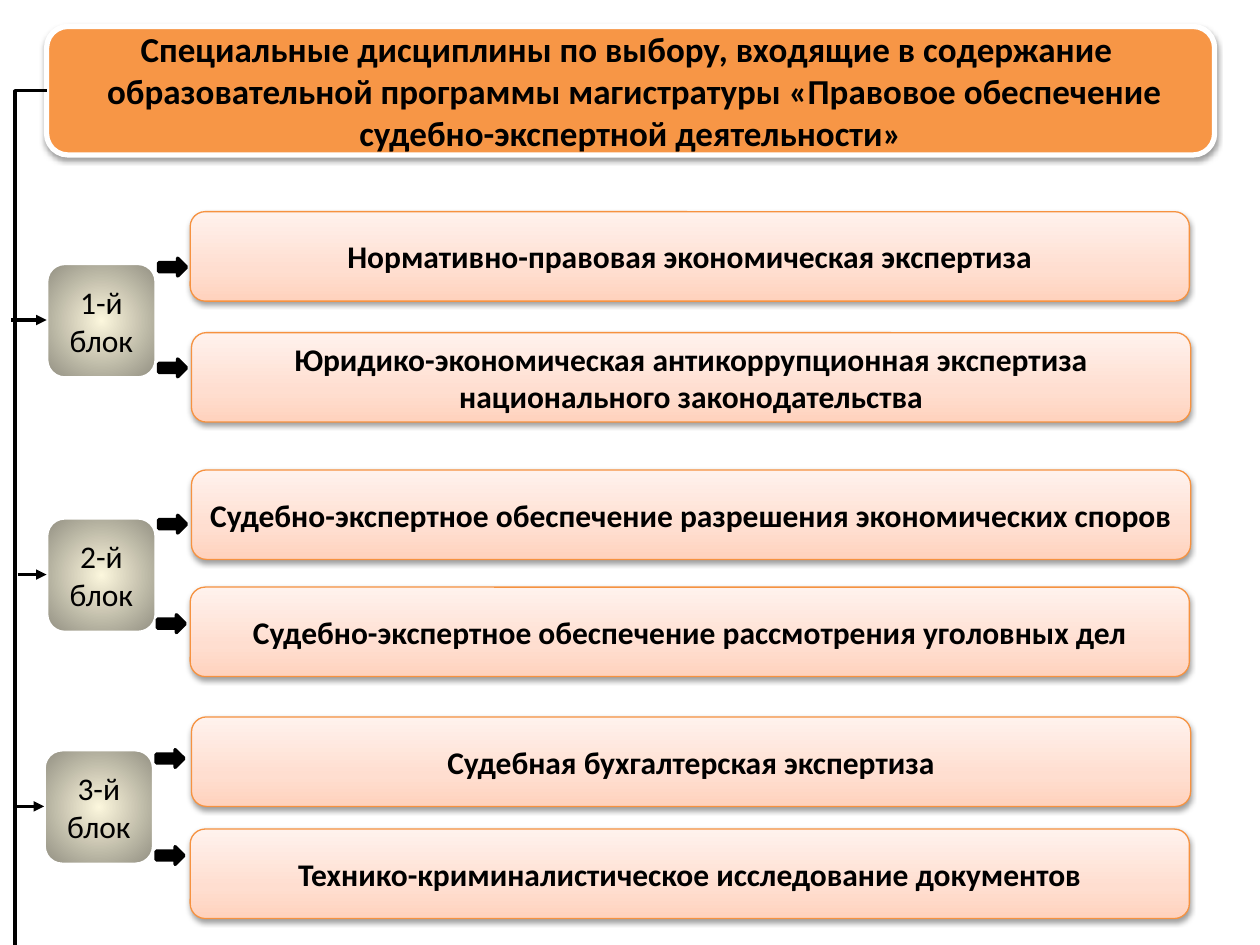
from dataclasses import dataclass

from pptx import Presentation
from pptx.dml.color import RGBColor
from pptx.enum.shapes import MSO_CONNECTOR as Link, MSO_SHAPE as Preset
from pptx.enum.text import MSO_ANCHOR as Anchor, PP_ALIGN as Align
from pptx.oxml import parse_xml
from pptx.oxml.ns import nsdecls, qn
from pptx.util import Inches, Pt


@dataclass(frozen=True)
class Theme:
    font: str = "Calibri"
    title_size: int = 20
    body_size: int = 18
    ink: str = "000000"
    white: str = "FFFFFF"
    title_fill: str = "F79646"
    course_line: str = "F69240"
    course_stops: tuple = ((0, "FFD2BD"), (35, "FFDED0"), (100, "FFF2ED"))
    block_stops: tuple = ((0, "FCF7DD"), (100, "918E81"))


THEME = Theme()
LINEAR_UP = '<a:lin ang="16200000" scaled="1"/>'
FROM_CENTRE = ('<a:path path="circle"><a:fillToRect l="50000" t="50000" '
               'r="50000" b="50000"/></a:path>')

TITLE = (
    "Специальные дисциплины по выбору, входящие в содержание ",
    " образовательной программы магистратуры «Правовое обеспечение "
    "судебно-экспертной деятельности»",
)

# Block: left, top, start of its feeder; courses: text, left, top; arrows: left, top
BLOCKS = (
    {"block": ("1-й блок", 0.37, 2.09, 0.09),
     "courses": (("Нормативно-правовая экономическая экспертиза", 1.51, 1.68),
                 ("Юридико-экономическая антикоррупционная экспертиза "
                  "национального законодательства", 1.52, 2.64)),
     "arrows": ((1.26, 2.05), (1.26, 2.85))},
    {"block": ("2-й блок", 0.37, 4.11, 0.14),
     "courses": (("Судебно-экспертное обеспечение разрешения экономических споров",
                  1.52, 3.73),
                 ("Судебно-экспертное обеспечение рассмотрения уголовных дел",
                  1.51, 4.66)),
     "arrows": ((1.26, 4.09), (1.25, 4.88))},
    {"block": ("3-й блок", 0.35, 5.95, 0.12),
     "courses": (("Судебная бухгалтерская экспертиза", 1.52, 5.69),
                 ("Технико-криминалистическое исследование документов",
                  1.51, 6.58)),
     "arrows": ((1.24, 5.95), (1.24, 6.72))},
)


def apply_format(target, values):
    for name, value in values.items():
        setattr(target, name, value)


def set_line(line, color, width):
    line.color.rgb = RGBColor.from_string(color)
    line.width = Pt(width)


def add_box(page, preset, place, fill, line):
    """Add a flat shape; fill is a colour, or None for a later gradient."""
    box = page.shapes.add_shape(preset, *map(Inches, place))
    box.shadow.inherit = False
    if fill:
        box.fill.solid()
        box.fill.fore_color.rgb = RGBColor.from_string(fill)
    set_line(box.line, *line)
    return box


def set_gradient(box, stops, direction):
    box.fill.gradient()
    current = box.element.spPr.find(qn("a:gradFill"))
    marks = "".join(f'<a:gs pos="{pos * 1000}"><a:srgbClr val="{color}"/></a:gs>'
                    for pos, color in stops)
    gradient = parse_xml(f'<a:gradFill {nsdecls("a")} rotWithShape="1">'
                         f'<a:gsLst>{marks}</a:gsLst>{direction}</a:gradFill>')
    current.getparent().replace(current, gradient)


def add_shadow(box):
    box.element.spPr.find(qn("a:effectLst")).append(parse_xml(
        f'<a:outerShdw {nsdecls("a")} blurRad="{Pt(3.1)}" dist="{Pt(1.6)}" '
        f'dir="5400000" rotWithShape="0"><a:srgbClr val="{THEME.ink}">'
        '<a:alpha val="38000"/></a:srgbClr></a:outerShdw>'))


def write_text(box, lines, size, bold):
    frame = box.text_frame
    apply_format(frame, {"word_wrap": True, "vertical_anchor": Anchor.MIDDLE})
    for index, text in enumerate(lines):
        para = frame.add_paragraph() if index else frame.paragraphs[0]
        para.alignment = Align.CENTER
        span = para.add_run()
        span.text = text
        apply_format(span.font, {"name": THEME.font, "size": Pt(size), "bold": bold})
        span.font.color.rgb = RGBColor.from_string(THEME.ink)


def add_title(page):
    box = add_box(page, Preset.ROUNDED_RECTANGLE, (0.37, 0.21, 9.27, 1.02),
                  THEME.title_fill, (THEME.white, 3))
    add_shadow(box)
    write_text(box, TITLE, THEME.title_size, True)


def add_course(page, text, left, top):
    box = add_box(page, Preset.ROUNDED_RECTANGLE, (left, top, 7.93, 0.71),
                  None, (THEME.course_line, 0.75))
    set_gradient(box, THEME.course_stops, LINEAR_UP)
    add_shadow(box)
    write_text(box, [text], THEME.body_size, True)


def add_block(page, text, left, top):
    box = add_box(page, Preset.ROUNDED_RECTANGLE, (left, top, 0.87, 0.91),
                  None, (THEME.white, 2))
    set_gradient(box, THEME.block_stops, FROM_CENTRE)
    write_text(box, [text], THEME.body_size, False)


def add_link(page, kind, start, end):
    link = page.shapes.add_connector(kind, *map(Inches, (*start, *end)))
    set_line(link.line, THEME.ink, 2)
    link.element.spPr.append(parse_xml(f'<a:effectLst {nsdecls("a")}/>'))
    return link


def add_feeder(page, start_x, end_x, y):
    link = add_link(page, Link.STRAIGHT, (start_x, y), (end_x, y))
    link.element.spPr.find(qn("a:ln")).append(
        parse_xml(f'<a:tailEnd {nsdecls("a")} type="triangle"/>'))


def add_trunk(page):
    trunk = add_link(page, Link.ELBOW, (0.37, 0.72), (0.12, 7.5))
    # A single corner instead of the default two
    trunk.element.spPr.find(qn("a:prstGeom")).set("prst", "bentConnector2")


def main():
    deck = Presentation()
    apply_format(deck, {"slide_width": Inches(10), "slide_height": Inches(7.5)})
    page = deck.slides.add_slide(deck.slide_layouts[6])

    # Heading and the trunk line that leaves it
    add_title(page)
    add_trunk(page)

    # Blocks, each with its feeder, courses and arrows
    for group in BLOCKS:
        for course in group["courses"]:
            add_course(page, *course)
        text, left, top, feeder_start = group["block"]
        add_block(page, text, left, top)
        add_feeder(page, feeder_start, left, top + 0.45)
        for arrow in group["arrows"]:
            add_box(page, Preset.RIGHT_ARROW, (*arrow, 0.22, 0.14),
                    THEME.ink, (THEME.ink, 2))

    deck.save("out.pptx")


if __name__ == "__main__":
    main()
